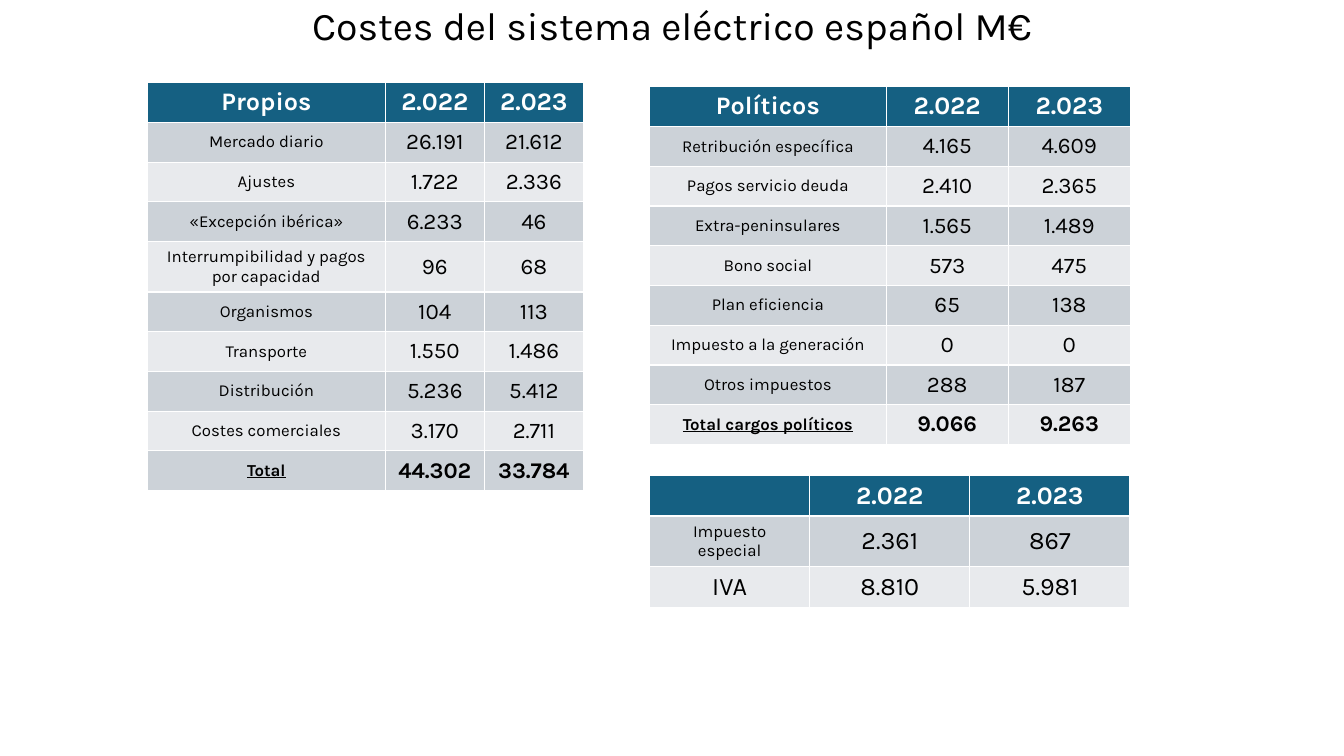
from pptx import Presentation
from pptx.dml.color import RGBColor
from pptx.enum import text
from pptx.util import Pt

COLORS = {"header": "156082", "odd": "CCD2D8", "even": "E8EAED",
          "white": "FFFFFF", "black": "000000"}


class SlideBuilder:
    font = "Karla"

    def __init__(self, slide):
        self.slide = slide

    def label(self, tf, content, size, color="black", bold=False, underline=False):
        tf.text = content
        tf.word_wrap = True
        p = tf.paragraphs[0]
        p.alignment = text.PP_ALIGN.CENTER
        for r in p.runs:
            r.font.name = self.font
            r.font.size = Pt(size)
            r.font.bold = bold
            r.font.underline = underline
            r.font.color.rgb = RGBColor.from_string(COLORS[color])
        return p

    def title(self, content, left, top, width, height):
        tf = self.slide.shapes.add_textbox(Pt(left), Pt(top), Pt(width), Pt(height)).text_frame
        tf.vertical_anchor = text.MSO_ANCHOR.MIDDLE
        self.label(tf, content, 28).line_spacing = 0.9

    def table(self, rows, left, top, widths, row_height, value_size=16,
              total=False, large_labels=()):
        frame = self.slide.shapes.add_table(
            len(rows), len(widths), Pt(left), Pt(top),
            Pt(sum(widths)), Pt(row_height * len(rows)))
        table = frame.table
        for column, width in zip(table.columns, widths):
            column.width = Pt(width)
        for i, row in enumerate(rows):
            table.rows[i].height = Pt(row_height)
            is_total = total and i == len(rows) - 1
            fill = "header" if i == 0 else "odd" if i % 2 else "even"
            for j, content in enumerate(row):
                cell = table.cell(i, j)
                cell.vertical_anchor = text.MSO_ANCHOR.MIDDLE
                cell.fill.solid()
                cell.fill.fore_color.rgb = RGBColor.from_string(COLORS[fill])
                if i == 0:
                    self.label(cell.text_frame, content, 18, "white", bold=True)
                else:
                    small = j == 0 and content not in large_labels
                    self.label(cell.text_frame, content, 12 if small else value_size,
                               bold=is_total, underline=is_total and j == 0)


def main():
    prs = Presentation()
    prs.slide_width, prs.slide_height = Pt(960), Pt(540)
    s = SlideBuilder(prs.slides.add_slide(prs.slide_layouts[6]))

    # Title
    s.title("Costes del sistema eléctrico español M€", 66, 0, 828, 39.6)

    # System's own costs
    s.table([
        ("Propios", "2.022", "2.023"),
        ("Mercado diario", "26.191", "21.612"),
        ("Ajustes", "1.722", "2.336"),
        ("«Excepción ibérica»", "6.233", "46"),
        ("Interrumpibilidad y pagos por capacidad", "96", "68"),
        ("Organismos", "104", "113"),
        ("Transporte", "1.550", "1.486"),
        ("Distribución", "5.236", "5.412"),
        ("Costes comerciales", "3.170", "2.711"),
        ("Total", "44.302", "33.784"),
    ], 105.4, 58.6, (169.8, 70.8, 70.8), 28.4, total=True)

    # Political charges
    s.table([
        ("Políticos", "2.022", "2.023"),
        ("Retribución específica", "4.165", "4.609"),
        ("Pagos servicio deuda", "2.410", "2.365"),
        ("Extra-peninsulares", "1.565", "1.489"),
        ("Bono social", "573", "475"),
        ("Plan eficiencia", "65", "138"),
        ("Impuesto a la generación", "0", "0"),
        ("Otros impuestos", "288", "187"),
        ("Total cargos políticos", "9.066", "9.263"),
    ], 464, 61.6, (169, 87.2, 87.2), 28.4, total=True)

    # Taxes
    s.table([
        ("", "2.022", "2.023"),
        ("Impuesto especial", "2.361", "867"),
        ("IVA", "8.810", "5.981"),
    ], 464, 339.4, (114.4,) * 3, 29.2, value_size=18, large_labels=("IVA",))

    prs.save("out.pptx")


if __name__ == "__main__":
    main()
